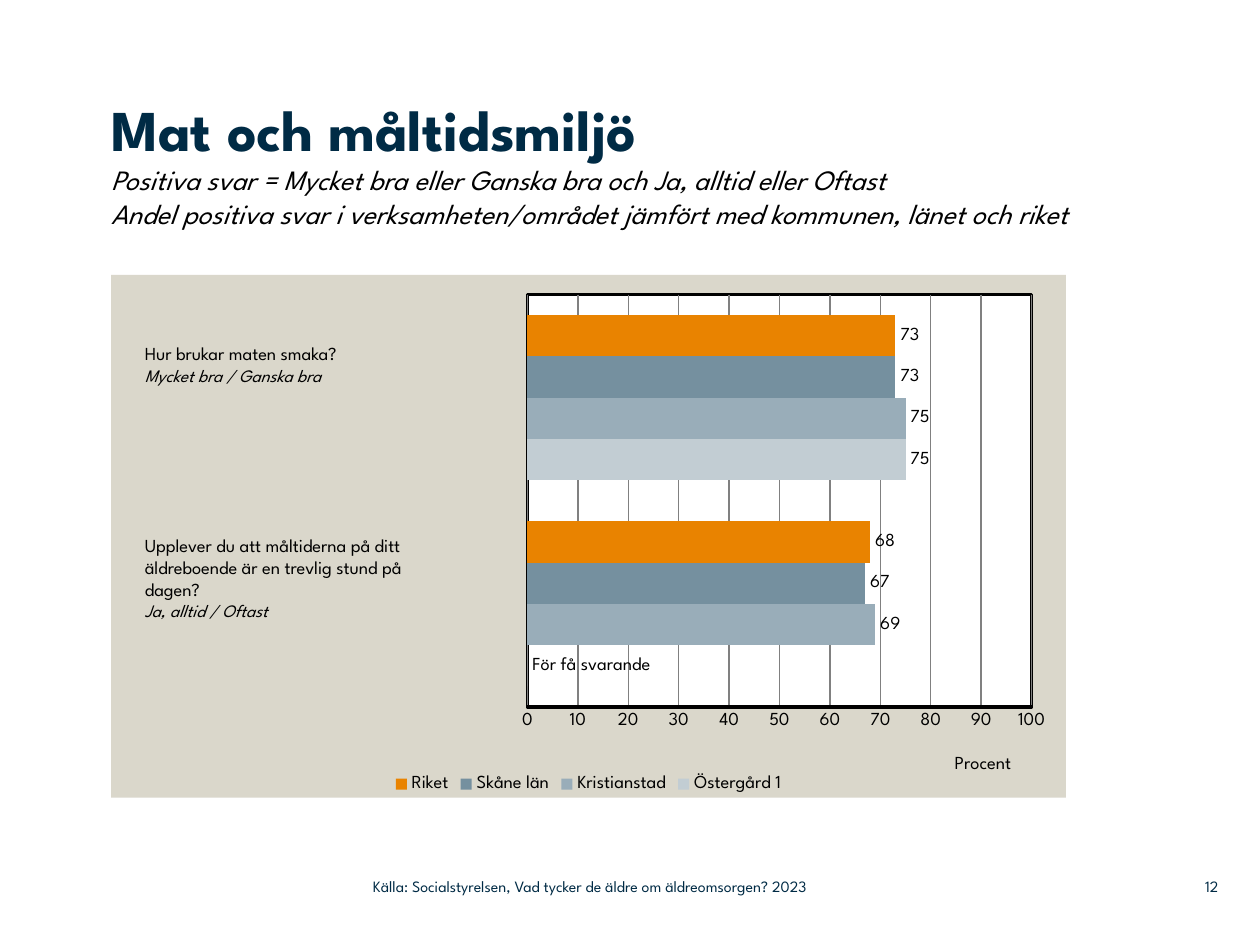
from dataclasses import dataclass

from lxml.etree import SubElement
from pptx import Presentation
from pptx.chart.data import CategoryChartData
from pptx.dml.color import RGBColor
from pptx.enum.chart import XL_CHART_TYPE as ChartType
from pptx.enum.chart import XL_LABEL_POSITION as LabelPos
from pptx.enum.chart import XL_LEGEND_POSITION as LegendPos
from pptx.enum.chart import XL_TICK_MARK as TickMark
from pptx.enum.text import MSO_ANCHOR as Anchor
from pptx.enum.text import PP_ALIGN as Align
from pptx.oxml import parse_xml
from pptx.oxml.ns import nsdecls, qn
from pptx.util import Cm, Pt


@dataclass(frozen=True)
class Theme:
    font: str = "League Spartan"
    navy: str = "002B45"
    black: str = "000000"
    grid: str = "808080"
    panel: str = "DAD7CB"
    plot: str = "FFFFFF"
    title: float = 33
    subtitle: float = 16
    text: float = 10.5
    note: float = 10
    footer: float = 9


T = Theme()
CATEGORIES = ["1", "2"]
# Bars are stacked upwards, so the lowest bar comes first
SERIES = [
    ("Östergård 1", (0, 75), "C2CDD3"),
    ("Kristianstad", (69, 75), "99ADB9"),
    ("Skåne län", (67, 73), "75909F"),
    ("Riket", (68, 73), "E98300"),
]


def set_font(font, size, color=T.black, bold=False, italic=False):
    font.name, font.size = T.font, Pt(size)
    font.bold, font.italic = bold, italic
    font.color.rgb = RGBColor.from_string(color)


def add_title(s, heading, lines):
    title = s.shapes.title
    title.left, title.top, title.width, title.height = Cm(2.24), Cm(1.88), Cm(21.39), Cm(3.66)
    tf = title.text_frame
    tf.margin_left = tf.margin_right = tf.margin_top = tf.margin_bottom = 0
    tf.vertical_anchor = Anchor.TOP
    p = tf.paragraphs[0]
    p.alignment = Align.LEFT
    r = p.add_run()
    r.text = heading
    set_font(r.font, T.title, T.navy, bold=True)
    for line in lines:
        p.add_line_break()
        r = p.add_run()
        r.text = line
        set_font(r.font, T.subtitle, italic=True)


def add_text(s, left, top, width, height):
    tf = s.shapes.add_textbox(Cm(left), Cm(top), Cm(width), Cm(height)).text_frame
    tf.word_wrap = True
    return tf


def add_question(s, top, height, lines, answer):
    tf = add_text(s, 2.67, top, 7.04, height)
    for i, text in enumerate([*lines, answer]):
        p = tf.add_paragraph() if i else tf.paragraphs[0]
        p.text = text
        is_answer = i == len(lines)
        set_font(p.font, T.note if is_answer else T.text, italic=is_answer)


def add_footer(s, left, width, text, align):
    tf = add_text(s, left, 17.5, width, 0.74)
    tf.margin_left = tf.margin_right = tf.margin_top = tf.margin_bottom = 0
    tf.vertical_anchor = Anchor.MIDDLE
    p = tf.paragraphs[0]
    p.text, p.alignment = text, align
    set_font(p.font, T.footer, T.navy)


def set_layout(parent, index, **values):
    """Place a chart part by fractions of the chart area."""
    for old in parent.findall(qn("c:layout")):
        parent.remove(old)
    layout = parse_xml(f"<c:layout {nsdecls('c')}/>")
    manual = SubElement(layout, qn("c:manualLayout"))
    for tag, value in values.items():
        SubElement(manual, qn(f"c:{tag}")).set("val", str(value))
    parent.insert(index, layout)


def area_format(fill, line):
    return parse_xml(
        f"<c:spPr {nsdecls('c', 'a')}><a:solidFill><a:srgbClr val='{fill}'/></a:solidFill>"
        f"{line}</c:spPr>")


def style_areas(chart):
    space = chart.element
    space.find(qn("c:chart")).addnext(area_format(T.panel, "<a:ln><a:noFill/></a:ln>"))
    area = space.find(".//" + qn("c:plotArea"))
    set_layout(area, 0, layoutTarget="inner", xMode="edge", yMode="edge",
               x=0.436, y=0.038, w=0.528, h=0.789)
    border = (f"<a:ln w='{Pt(2)}'><a:solidFill><a:srgbClr val='{T.black}'/>"
              "</a:solidFill></a:ln>")
    area.append(area_format(T.plot, border))


def style_axes(chart):
    chart.category_axis.visible = False
    axis = chart.value_axis
    axis.minimum_scale, axis.maximum_scale, axis.major_unit = 0, 100, 10
    axis.major_tick_mark = axis.minor_tick_mark = TickMark.NONE
    set_font(axis.tick_labels.font, T.text)
    axis.format.line.color.rgb = RGBColor.from_string(T.black)
    axis.format.line.width = Pt(2)
    axis.has_major_gridlines = True
    grid = axis.major_gridlines.format.line
    grid.color.rgb = RGBColor.from_string(T.grid)
    grid.width = Pt(0.75)
    p = axis.axis_title.text_frame.paragraphs[0]
    p.text = "Procent"
    set_font(p.font, T.text)
    set_layout(axis.axis_title.element, 1, xMode="edge", yMode="edge", x=0.88, y=0.91)


def add_bar_chart(s):
    data = CategoryChartData()
    data.categories = CATEGORIES
    for name, values, _ in SERIES:
        data.add_series(name, values)
    chart = s.shapes.add_chart(ChartType.BAR_CLUSTERED, Cm(2.24), Cm(5.54),
                               Cm(19.25), Cm(10.54), data).chart
    set_font(chart.font, T.text)
    chart.has_title = False
    chart.has_legend = True
    chart.legend.position = LegendPos.BOTTOM
    chart.legend.include_in_layout = False
    set_font(chart.legend.font, T.text)
    plot = chart.plots[0]
    plot.gap_width, plot.overlap, plot.vary_by_categories = 100, 0, False
    for series, (_, _, color) in zip(plot.series, SERIES):
        series.format.fill.solid()
        series.format.fill.fore_color.rgb = RGBColor.from_string(color)
        labels = series.data_labels
        labels.show_value, labels.position = True, LabelPos.OUTSIDE_END
        set_font(labels.font, T.text)
    # Too few answers to show a value
    label = plot.series[0].points[0].data_label
    p = label.text_frame.paragraphs[0]
    p.text = "För få svarande"
    set_font(p.font, T.text)
    label.position = LabelPos.OUTSIDE_END
    style_axes(chart)
    style_areas(chart)


def main():
    prs = Presentation()
    prs.slide_width, prs.slide_height = Cm(25.4), Cm(19.05)
    s = prs.slides.add_slide(prs.slide_layouts[5])

    # Heading
    add_title(s, "Mat och måltidsmiljö", [
        "Positiva svar = Mycket bra eller Ganska bra och Ja, alltid eller Oftast",
        "Andel positiva svar i verksamheten/området jämfört med kommunen, länet och riket",
    ])

    # Chart with its questions
    add_bar_chart(s)
    add_question(s, 6.78, 1.6, ["Hur brukar maten smaka?"], "Mycket bra / Ganska bra")
    add_question(s, 10.64, 2.49, [
        "Upplever du att måltiderna på ditt äldreboende är en trevlig stund på",
        "dagen?",
    ], "Ja, alltid / Oftast")

    # Footer
    add_footer(s, 23.37, 1.19, "12", Align.RIGHT)
    add_footer(s, 7.52, 11.25,
               "Källa: Socialstyrelsen, Vad tycker de äldre om äldreomsorgen? 2023", Align.LEFT)
    prs.save("out.pptx")


if __name__ == "__main__":
    main()
